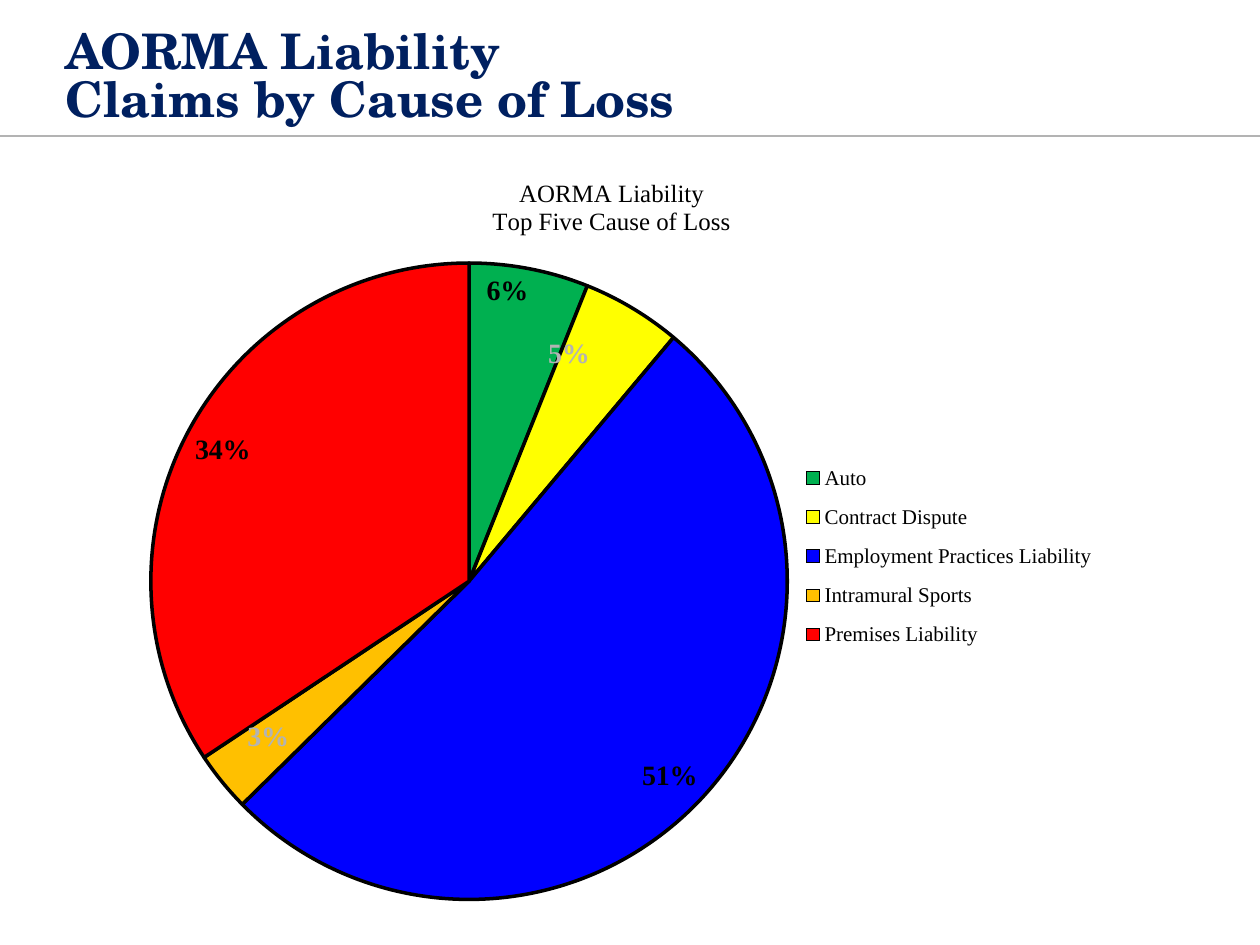
from copy import deepcopy

from lxml.etree import SubElement
from pptx import Presentation
from pptx.chart.data import CategoryChartData
from pptx.dml.color import RGBColor
from pptx.enum.chart import XL_CHART_TYPE as ChartType
from pptx.enum.chart import XL_LABEL_POSITION as LabelPosition
from pptx.enum.chart import XL_LEGEND_POSITION as LegendPosition
from pptx.enum.shapes import MSO_CONNECTOR as Connector
from pptx.enum.text import MSO_ANCHOR as Anchor
from pptx.enum.text import MSO_AUTO_SIZE as AutoSize
from pptx.enum.text import PP_ALIGN as Align
from pptx.oxml.ns import qn
from pptx.util import Inches, Pt

NAVY = RGBColor(0x00, 0x20, 0x60)
GRAY = RGBColor(0xB3, 0xB3, 0xB3)
BLACK = RGBColor(0x00, 0x00, 0x00)
GREEN = RGBColor(0x00, 0xB0, 0x50)
YELLOW = RGBColor(0xFF, 0xFF, 0x00)
BLUE = RGBColor(0x00, 0x00, 0xFF)
ORANGE = RGBColor(0xFF, 0xC0, 0x00)
RED = RGBColor(0xFF, 0x00, 0x00)

HEADING_FONT = "TeX Gyre Schola"
CHART_FONT = "Times New Roman"
PERCENT = '0"%"'

HEADING = ["AORMA Liability", "Claims by Cause of Loss"]
CHART_TITLE = ["AORMA Liability", "Top Five Cause of Loss"]
CAUSES = [
    ("Auto", 6, GREEN),
    ("Contract Dispute", 5, YELLOW),
    ("Employment Practices Liability", 51, BLUE),
    ("Intramural Sports", 3, ORANGE),
    ("Premises Liability", 34, RED),
]
MOVED_LABELS = {1: (-0.04, 0.03), 3: (0.02, -0.03)}


def style_font(font, name=CHART_FONT, size=12, color=BLACK, bold=False):
    font.name = name
    font.size = Pt(size)
    font.bold = bold
    font.color.rgb = color


def write_lines(frame, lines, align, spacing=None, **style):
    for index, text in enumerate(lines):
        para = frame.add_paragraph() if index else frame.paragraphs[0]
        para.alignment = align
        para.line_spacing = spacing
        span = para.add_run()
        span.text = text
        style_font(span.font, **style)


def set_layout(element, index, **settings):
    for old in element.findall(qn("c:layout")):
        element.remove(old)
    layout = SubElement(element, qn("c:layout"))
    manual = SubElement(layout, qn("c:manualLayout"))
    for tag, value in settings.items():
        SubElement(manual, qn(f"c:{tag}")).set("val", str(value))
    element.insert(index, layout)


def add_heading(page):
    box = page.shapes.title
    box.left, box.top = Inches(0.42), Inches(0.17)
    box.width, box.height = Inches(7.17), Inches(0.92)
    frame = box.text_frame
    frame.auto_size = AutoSize.NONE
    frame.word_wrap = True
    frame.vertical_anchor = Anchor.MIDDLE
    write_lines(frame, HEADING, Align.LEFT, spacing=0.8,
                name=HEADING_FONT, size=28, color=NAVY, bold=True)


def add_rule(page):
    rule = page.shapes.add_connector(
        Connector.STRAIGHT, 0, Inches(1.08), Inches(10), Inches(1.08))
    rule.line.color.rgb = GRAY
    rule.line.width = Pt(0.75)
    SubElement(rule._element.spPr, qn("a:effectLst"))


def add_pie(page):
    data = CategoryChartData(number_format=PERCENT)
    data.categories = [name for name, _, _ in CAUSES]
    data.add_series("Series 1", [value for _, value, _ in CAUSES])
    chart = page.shapes.add_chart(
        ChartType.PIE, Inches(1), Inches(1.13), Inches(7.78), Inches(6.26),
        data).chart
    style_font(chart.font)

    chart.has_title = True
    title = chart.chart_title
    write_lines(title.text_frame, CHART_TITLE, Align.CENTER, size=14.2)
    set_layout(title._element, 1, xMode="edge", yMode="edge", x=0.37, y=0.04)

    chart.has_legend = True
    legend = chart.legend
    legend.position = LegendPosition.RIGHT
    legend.include_in_layout = False
    style_font(legend.font)
    set_layout(legend._element, 1, xMode="edge", yMode="edge",
               x=0.68, y=0.39, w=0.32, h=0.27)

    plot = chart.plots[0]
    plot.vary_by_categories = True
    set_layout(plot._element.getparent(), 0, layoutTarget="inner",
               xMode="edge", yMode="edge", x=0.025, y=0.153, w=0.65, h=0.807)

    series = plot.series[0]
    for index, (_, _, color) in enumerate(CAUSES):
        slice_format = series.points[index].format
        slice_format.fill.solid()
        slice_format.fill.fore_color.rgb = color
        slice_format.line.color.rgb = BLACK
        slice_format.line.width = Pt(2)

    labels = series.data_labels
    labels.show_value = True
    labels.number_format = PERCENT
    labels.number_format_is_linked = False
    labels.position = LabelPosition.INSIDE_END
    style_font(labels.font, size=16, bold=True)
    number_format = labels._element.find(qn("c:numFmt"))

    for index, (x, y) in MOVED_LABELS.items():
        label = series.points[index].data_label
        style_font(label.font, size=16, color=GRAY, bold=True)
        label.position = LabelPosition.INSIDE_END
        element = labels._element.findall(qn("c:dLbl"))[-1]
        set_layout(element, 1, x=x, y=y)
        element.insert(2, deepcopy(number_format))


def main():
    deck = Presentation()
    deck.slide_width, deck.slide_height = Inches(10), Inches(7.5)
    page = deck.slides.add_slide(deck.slide_layouts[5])
    add_rule(page)
    add_heading(page)
    add_pie(page)
    deck.save("out.pptx")


if __name__ == "__main__":
    main()
